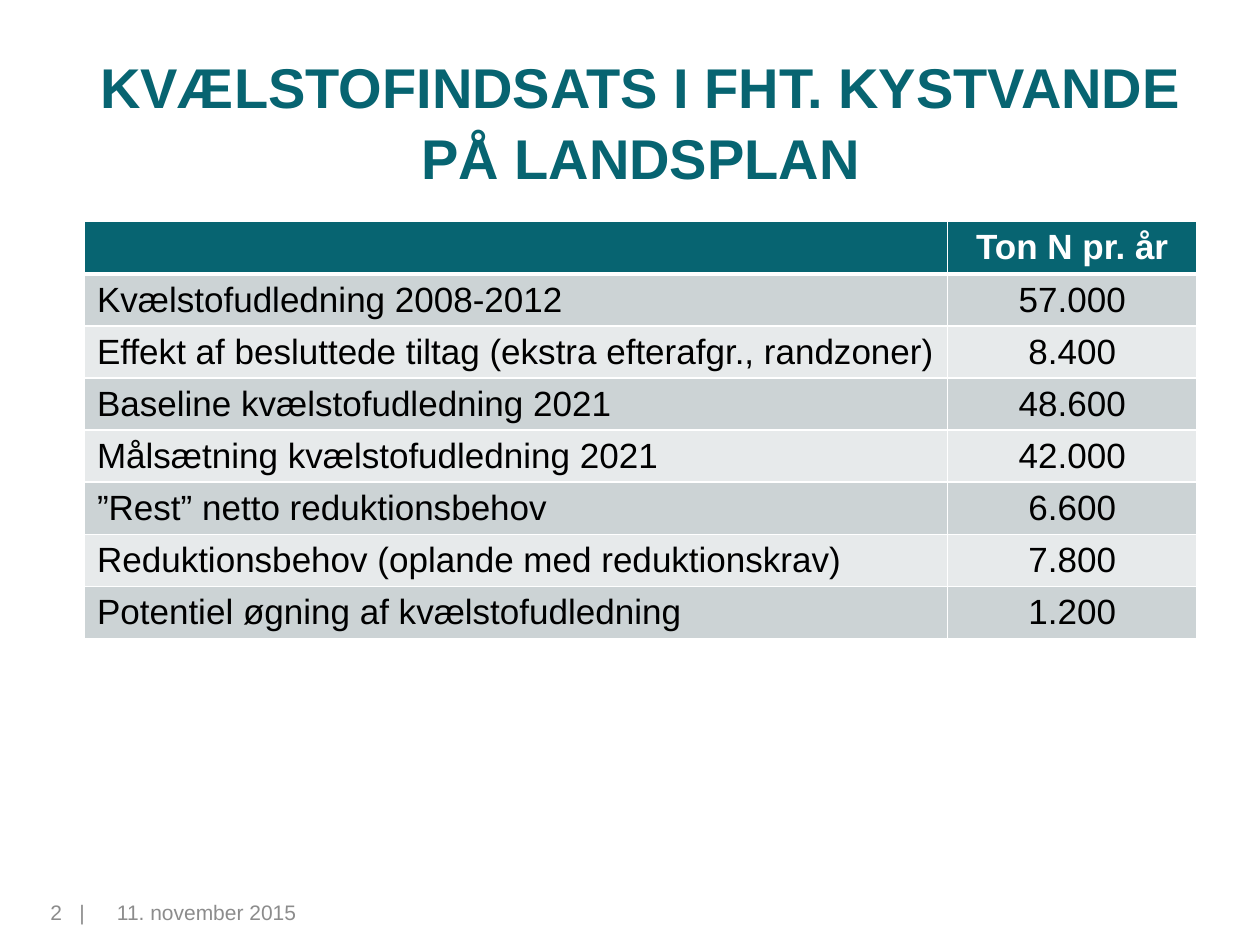
from dataclasses import dataclass

from lxml import etree
from pptx import Presentation
from pptx.dml.color import RGBColor as Rgb
from pptx.enum.text import MSO_ANCHOR as Anchor, PP_ALIGN as Align
from pptx.oxml.ns import qn
from pptx.util import Inches, Pt


@dataclass(frozen=True)
class Theme:
    """Colours, font and type sizes of the slide."""
    font: str = "Arial"
    teal: str = "076471"
    dark_band: str = "CCD3D5"
    light_band: str = "E7EAEB"
    white: str = "FFFFFF"
    black: str = "000000"
    grey: str = "8C8C8C"
    title_size: int = 32
    table_size: int = 20
    footer_size: int = 12


THEME = Theme()
TITLE = "KVÆLSTOFINDSATS I FHT. KYSTVANDE\vPÅ LANDSPLAN"
NITROGEN_ROWS = [
    ("", "Ton N pr. år"),
    ("Kvælstofudledning 2008-2012", "57.000"),
    ("Effekt af besluttede tiltag (ekstra efterafgr., randzoner)", "8.400"),
    ("Baseline kvælstofudledning 2021", "48.600"),
    ("Målsætning kvælstofudledning 2021", "42.000"),
    ("”Rest” netto reduktionsbehov", "6.600"),
    ("Reduktionsbehov (oplande med reduktionskrav)", "7.800"),
    ("Potentiel øgning af kvælstofudledning", "1.200"),
]


def style(paragraph, size, color, bold=False, align=Align.LEFT):
    """Set the font and alignment of a paragraph."""
    paragraph.alignment = align
    font = paragraph.font
    font.name, font.size, font.bold = THEME.font, Pt(size), bold
    font.color.rgb = Rgb.from_string(color)


def add_border(cell, side, width):
    """Draw a white border on one side of a cell."""
    line = etree.Element(qn(f"a:ln{side}"), w=str(Pt(width)))
    fill = etree.SubElement(line, qn("a:solidFill"))
    etree.SubElement(fill, qn("a:srgbClr"), val=THEME.white)
    properties = cell._tc.get_or_add_tcPr()
    properties.insert(len(properties.findall("*")) - 1, line)


def place_title(slide, left, top, width, height):
    """Fill and place the title."""
    title = slide.shapes.title
    title.left, title.top = Inches(left), Inches(top)
    title.width, title.height = Inches(width), Inches(height)
    frame = title.text_frame
    frame.text = TITLE
    frame.word_wrap = True
    frame.vertical_anchor = Anchor.MIDDLE
    heading = frame.paragraphs[0]
    heading.line_spacing = 1.05
    style(heading, THEME.title_size, THEME.teal, True, Align.CENTER)


def add_nitrogen_table(slide, left, top, width, row_height=0.41, amount_width=1.98):
    """Add the table of nitrogen amounts."""
    table = slide.shapes.add_table(
        len(NITROGEN_ROWS), 2, Inches(left), Inches(top),
        Inches(width), Inches(row_height * len(NITROGEN_ROWS))).table
    table.horz_banding = False
    table.columns[0].width = Inches(width - amount_width)
    table.columns[1].width = Inches(amount_width)
    for row, entries in enumerate(NITROGEN_ROWS):
        table.rows[row].height = Inches(row_height)
        header = row == 0
        band = THEME.dark_band if row % 2 else THEME.light_band
        borders = {"L": 1, "R": 1, "T": 3 if row == 1 else 1, "B": 3 if header else 1}
        for column, entry in enumerate(entries):
            cell = table.cell(row, column)
            cell.text = entry
            cell.vertical_anchor = Anchor.MIDDLE
            cell.margin_top = cell.margin_bottom = Inches(0.04)
            cell.fill.solid()
            cell.fill.fore_color.rgb = Rgb.from_string(THEME.teal if header else band)
            for side, border_width in borders.items():
                add_border(cell, side, border_width)
            style(cell.text_frame.paragraphs[0], THEME.table_size,
                  THEME.white if header else THEME.black, header,
                  Align.CENTER if column else Align.LEFT)


def add_footer_text(slide, text, left, top, width, height, inset=0.1, tab=None):
    """Add one footer text, with a tab stop if it needs one."""
    frame = slide.shapes.add_textbox(
        Inches(left), Inches(top), Inches(width), Inches(height)).text_frame
    frame.word_wrap = True
    frame.margin_left = Inches(inset)
    frame.text = text
    paragraph = frame.paragraphs[0]
    if tab:
        stops = etree.SubElement(paragraph._p.get_or_add_pPr(), qn("a:tabLst"))
        etree.SubElement(stops, qn("a:tab"), pos=str(Inches(tab)), algn="l")
    style(paragraph, THEME.footer_size, THEME.grey)


def add_footer(slide, left, top, height):
    """Add the date and the slide number."""
    add_footer_text(slide, "11. november 2015", left + 0.83, top, 2.33, height)
    add_footer_text(slide, "2\t|", left, top, 0.78, height, inset=0.4, tab=0.23)


def main():
    """Build and save the slide."""
    deck = Presentation()
    deck.slide_width, deck.slide_height = Inches(10), Inches(7.5)
    slide = deck.slides.add_slide(deck.slide_layouts[5])
    place_title(slide, 0.67, 0.44, 8.83, 1.02)
    add_footer(slide, 0, 7.09, 0.4)
    add_nitrogen_table(slide, 0.67, 1.76, 8.83)
    deck.save("out.pptx")


if __name__ == "__main__":
    main()
